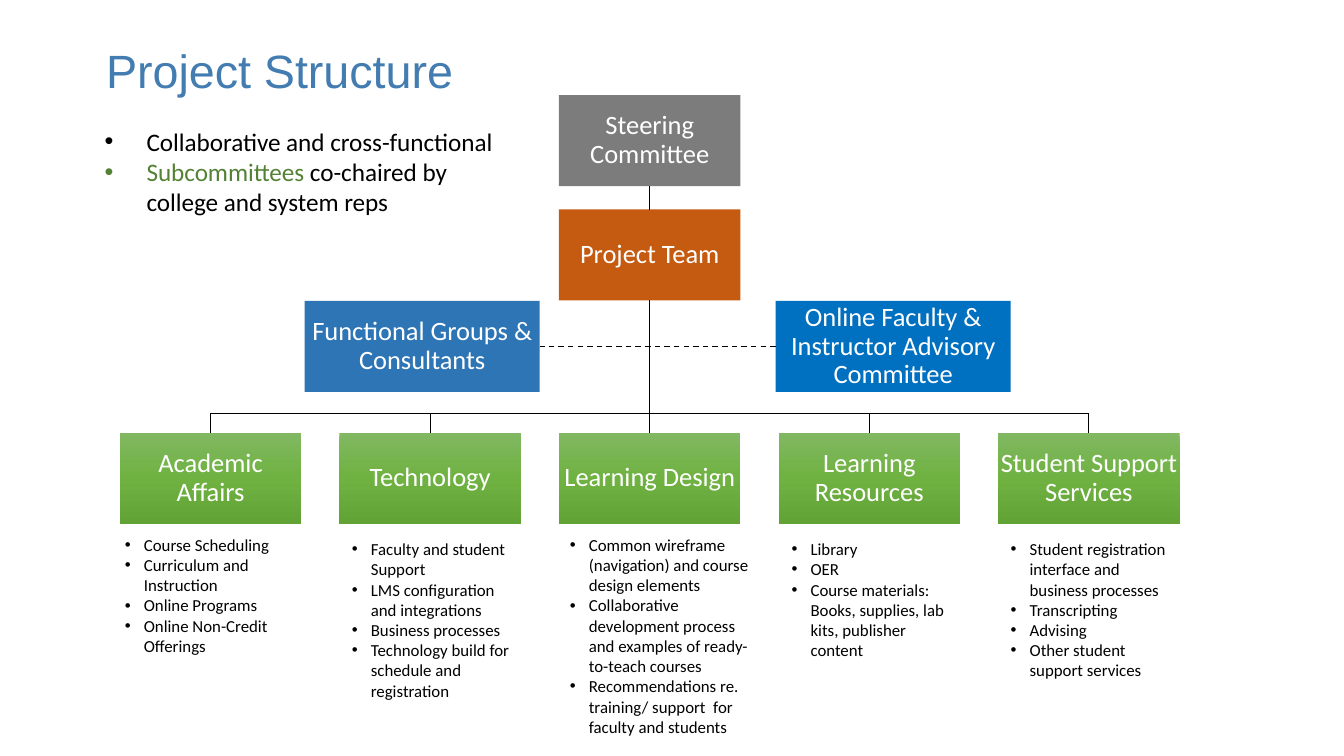
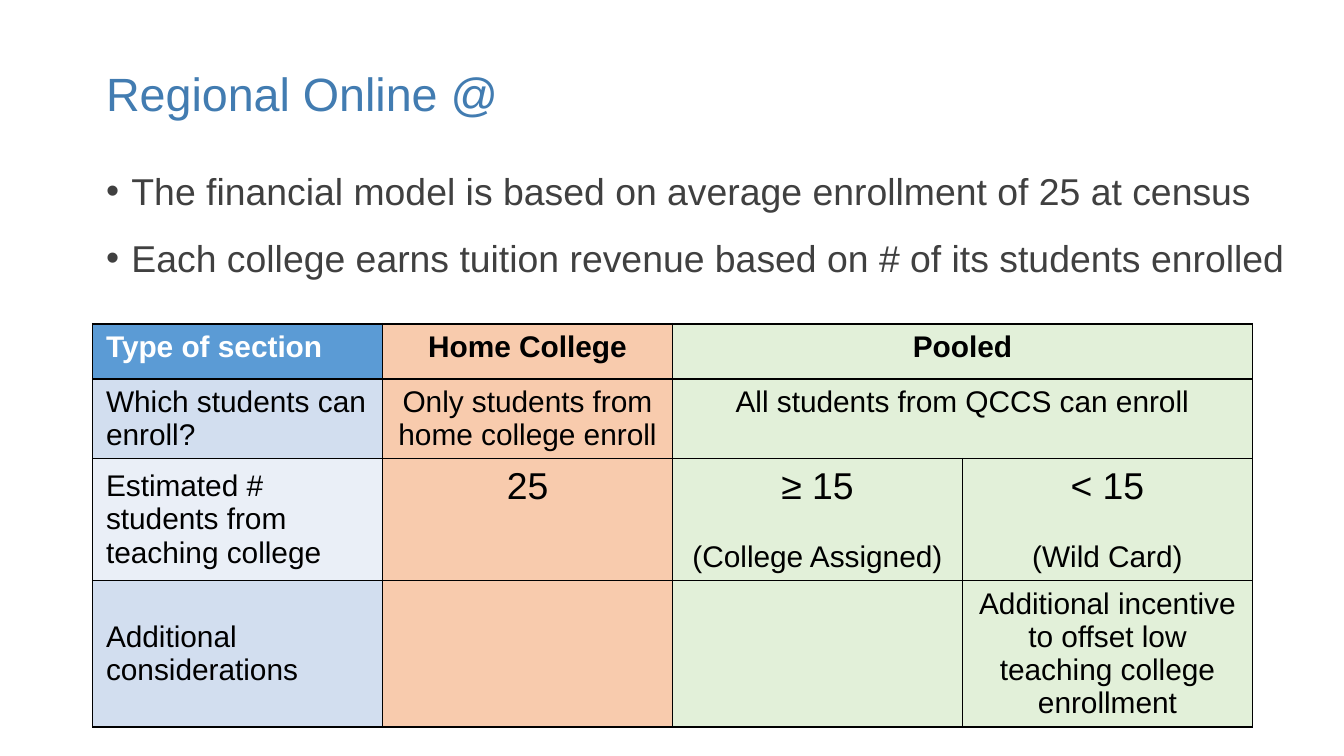
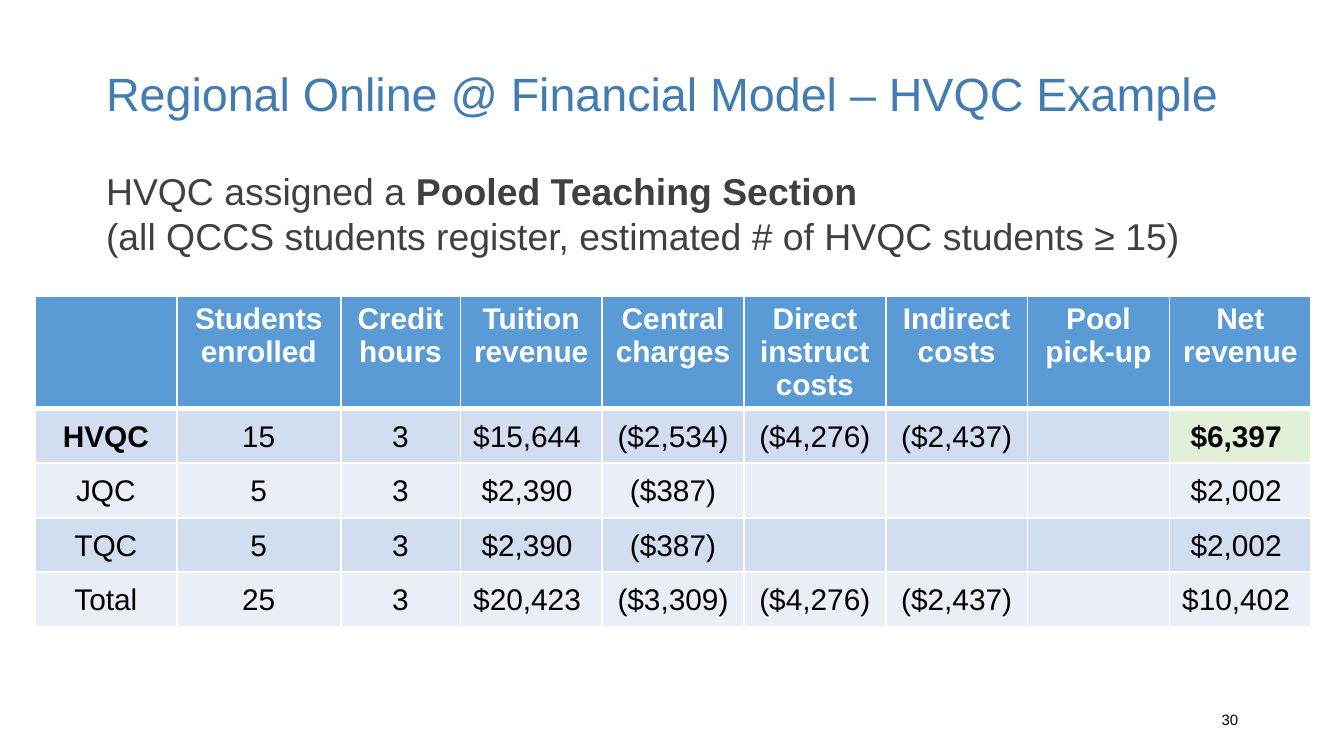
"""Build three slides on an online course project: structure, model and example."""
from copy import deepcopy

from lxml.etree import SubElement
from pptx import Presentation
from pptx.dml.color import RGBColor
from pptx.enum.dml import MSO_LINE
from pptx.enum.shapes import MSO_CONNECTOR, MSO_SHAPE
from pptx.enum.text import MSO_ANCHOR, MSO_AUTO_SIZE, PP_ALIGN
from pptx.oxml.ns import qn
from pptx.util import Cm, Pt

BLACK = RGBColor(0x00, 0x00, 0x00)
WHITE = RGBColor(0xFF, 0xFF, 0xFF)
TITLE = RGBColor(0x42, 0x7C, 0xB1)
BODY = RGBColor(0x40, 0x40, 0x40)
GRAY = RGBColor(0x7C, 0x7C, 0x7C)
RUST = RGBColor(0xC5, 0x5A, 0x11)
AZURE = RGBColor(0x00, 0x70, 0xC0)
STEEL = RGBColor(0x2E, 0x75, 0xB6)
LEAF = RGBColor(0x54, 0x82, 0x35)
HEAD = RGBColor(0x5B, 0x9B, 0xD5)
BANDS = (RGBColor(0xD2, 0xDE, 0xEF), RGBColor(0xEA, 0xEF, 0xF7))
PEACH = RGBColor(0xF8, 0xCB, 0xAD)
MINT = RGBColor(0xE2, 0xF0, 0xD9)
GREENS = (
    RGBColor(0x81, 0xB8, 0x61),
    RGBColor(0x6F, 0xB2, 0x42),
    RGBColor(0x62, 0xA3, 0x36),
)

SANS = "Arial"
HUMAN = "Calibri"

HUB = 12.28
STEP = 4.15
BOX_W, BOX_H = 3.43, 1.72
SIDE_W = 4.44
BUS_Y, TEAM_Y = 7.81, 8.18

TEAMS = (
    ("Academic Affairs", (2.11, 9.98, 3.58, 3.0), (
        "Course Scheduling",
        "Curriculum and Instruction",
        "Online Programs",
        "Online Non-Credit Offerings")),
    ("Technology", (6.4, 10.06, 3.58, 3.76), (
        "Faculty and student Support",
        "LMS configuration and integrations",
        "Business processes",
        "Technology build for schedule and registration")),
    ("Learning Design", (10.52, 9.98, 4.04, 4.11), (
        "Common wireframe (navigation) and course design elements",
        "Collaborative development process and examples of ready-to-teach courses",
        "Recommendations re.  training/ support  for faculty and students")),
    ("Learning Resources", (14.71, 10.06, 3.58, 2.57), (
        "Library",
        "OER",
        "Course materials: Books, supplies, lab kits, publisher content")),
    ("Student Support Services", (18.85, 10.06, 3.58, 2.95), (
        "Student registration interface and business processes",
        "Transcripting",
        "Advising",
        "Other student support services")),
)

MODEL = (
    ("Type of section", "Home College", "Pooled", ""),
    ("Which students can enroll?", "Only students from home college enroll",
     "All students from QCCS can enroll", ""),
    ("Estimated # students from teaching college", "25",
     "≥ 15\n(College Assigned)", "< 15\n(Wild Card)"),
    ("Additional considerations", "", "",
     "Additional incentive to offset low teaching college enrollment"),
)

COSTS = (
    ("", "Students enrolled", "Credit hours", "Tuition revenue", "Central charges",
     "Direct instruct costs", "Indirect costs", "Pool pick-up", "Net revenue"),
    ("HVQC", "15", "3", "$15,644 ", "($2,534)", "($4,276)", "($2,437)", "", "$6,397 "),
    ("JQC", "5", "3", "$2,390 ", "($387)", "", "", "", "$2,002 "),
    ("TQC", "5", "3", "$2,390 ", "($387)", "", "", "", "$2,002 "),
    ("Total", "25", "3", "$20,423 ", "($3,309)", "($4,276)", "($2,437)", "", "$10,402 "),
)


def place(shape, left, top, width, height):
    """Move and size a shape, in centimetres."""
    shape.left, shape.top = Cm(left), Cm(top)
    shape.width, shape.height = Cm(width), Cm(height)


def style(para, face, size, ink, bold=False):
    """Set the font of a whole paragraph."""
    font = para.font
    font.name, font.size, font.bold = face, Pt(size), bold
    font.color.rgb = ink


def lines(frame, texts):
    """Yield one paragraph of the frame for each text."""
    for i, text in enumerate(texts):
        para = frame.add_paragraph() if i else frame.paragraphs[0]
        para.text = text
        yield para


def bullet(para, hang):
    """Give a paragraph a hanging bullet, or none when hang is zero."""
    props = para._p.get_or_add_pPr()
    props.set("marL", str(Cm(hang)))
    props.set("indent", str(-Cm(hang)))
    if hang:
        SubElement(props, qn("a:buFont")).set("typeface", SANS)
        SubElement(props, qn("a:buChar")).set("char", "•")
    else:
        SubElement(props, qn("a:buNone"))


def start(deck, layout, title, top=0.76, height=2.13):
    """Add a slide with its title."""
    slide = deck.slides.add_slide(deck.slide_layouts[layout])
    head = slide.shapes.title
    place(head, 1.75, top, 21.9, height)
    head.text_frame.text = title
    head.text_frame.auto_size = MSO_AUTO_SIZE.NONE
    head.text_frame.vertical_anchor = MSO_ANCHOR.MIDDLE
    para = head.text_frame.paragraphs[0]
    para.alignment, para.line_spacing = PP_ALIGN.LEFT, 0.9
    style(para, SANS, 25, TITLE)
    return slide


def body(slide, texts, hang=0):
    """Fill the body placeholder and return its last paragraph."""
    holder = slide.placeholders[1]
    place(holder, 1.75, 3.05, 23.04, 9.8)
    holder.text_frame.auto_size = MSO_AUTO_SIZE.NONE
    for para in lines(holder.text_frame, texts):
        bullet(para, hang)
        para.space_before = para.space_after = Pt(6)
        style(para, SANS, 20, BODY)
    return para


def notes(slide, area, texts, size, hang):
    """Add a bulleted text box and return its last paragraph."""
    frame = slide.shapes.add_textbox(*map(Cm, area)).text_frame
    frame.word_wrap = True
    frame.auto_size = MSO_AUTO_SIZE.SHAPE_TO_FIT_TEXT
    for para in lines(frame, texts):
        bullet(para, hang)
        style(para, HUMAN, size, BLACK)
    return para


def block(slide, text, left, top, width=BOX_W, fill=None):
    """Add a chart box, green graded unless a fill is given."""
    box = slide.shapes.add_shape(
        MSO_SHAPE.RECTANGLE, Cm(left), Cm(top), Cm(width), Cm(BOX_H))
    box.shadow.inherit = False
    box.line.fill.background()
    if fill is not None:
        box.fill.solid()
        box.fill.fore_color.rgb = fill
    else:
        box.fill.gradient()
        box.fill.gradient_angle = 270
        first = next(box._element.spPr.iter(qn("a:gs")))
        first.addnext(deepcopy(first))
        for i, stop in enumerate(box.fill.gradient_stops):
            stop.color.rgb, stop.position = GREENS[i], i / 2
    frame = box.text_frame
    frame.word_wrap = True
    frame.vertical_anchor = MSO_ANCHOR.MIDDLE
    frame.margin_left = frame.margin_right = Cm(0.04)
    frame.margin_top = frame.margin_bottom = Cm(0.03)
    frame.text = text
    para = frame.paragraphs[0]
    para.alignment, para.line_spacing = PP_ALIGN.CENTER, 0.9
    style(para, HUMAN, 14.2, WHITE)
    return box


def link(slide, begin=(0, 0), end=(0, 0), tail=None, tip=None, width=0.5):
    """Draw a line between points; tail and tip join it to (box, side)."""
    line = slide.shapes.add_connector(
        MSO_CONNECTOR.STRAIGHT, *map(Cm, (*begin, *end)))
    line.line.color.rgb = BLACK
    line.line.width = Pt(width)
    SubElement(line._element.spPr, qn("a:effectLst"))
    if tail:
        line.begin_connect(*tail)
    if tip:
        line.end_connect(*tip)
    return line


def grid(slide, left, top, widths, heights):
    """Add a plain table with given columns and rows."""
    table = slide.shapes.add_table(
        len(heights), len(widths), Cm(left), Cm(top),
        Cm(sum(widths)), Cm(sum(heights))).table
    table.first_row = table.horz_banding = False
    for col, width in zip(table.columns, widths):
        col.width = Cm(width)
    for row, height in zip(table.rows, heights):
        row.height = Cm(height)
    return table


def edge(cell, ink, top=1, base=1):
    """Draw the four borders of a cell."""
    props = cell._tc.get_or_add_tcPr()
    for side, width in zip("LRTB", (1, 1, top, base)):
        line = SubElement(props, qn("a:ln" + side), w=str(Pt(width)))
        fill = SubElement(line, qn("a:solidFill"))
        SubElement(fill, qn("a:srgbClr"), val=str(ink))


def put(cell, text, fill, ink=BLACK, bold=False, mid=False, left=False):
    """Fill a cell with colour and text."""
    cell.fill.solid()
    cell.fill.fore_color.rgb = fill
    cell.vertical_anchor = MSO_ANCHOR.MIDDLE if mid else MSO_ANCHOR.TOP
    for para in lines(cell.text_frame, text.split("\n")):
        para.alignment = PP_ALIGN.LEFT if left else PP_ALIGN.CENTER
        style(para, SANS, 16, ink, bold)


def chart(deck):
    """Build the project structure slide."""
    slide = start(deck, 5, "Project Structure", 0, 2.77)
    mid = HUB - BOX_W / 2
    steer = block(slide, "Steering Committee", mid, 1.8, fill=GRAY)
    crew = block(slide, "Project Team", mid, 3.96, fill=RUST)
    panel = block(slide, "Online Faculty & Instructor Advisory Committee",
                  14.66, 5.69, SIDE_W, AZURE)
    group = block(slide, "Functional Groups & Consultants",
                  5.76, 5.69, SIDE_W, STEEL)
    link(slide, tail=(steer, 2), tip=(crew, 0))
    dash = link(slide, tail=(panel, 1), tip=(group, 3), width=0.75)
    dash.line.dash_style = MSO_LINE.DASH
    link(slide, (HUB - 2 * STEP, BUS_Y), (HUB + 2 * STEP, BUS_Y))
    for i, (name, area, tasks) in enumerate(TEAMS):
        axis = HUB + (i - 2) * STEP
        box = block(slide, name, axis - BOX_W / 2, TEAM_Y)
        stem = (crew, 2) if i == 2 else None
        link(slide, (axis, BUS_Y), tail=stem, tip=(box, 0))
        notes(slide, area, tasks, 9, 0.36)
    last = notes(slide, (1.73, 2.26, 8.1, 2.57),
                 ("Collaborative and cross-functional", "Subcommittees"), 13.5, 0.79)
    last.runs[0].font.color.rgb = LEAF
    last.add_run().text = " co-chaired by college and system reps"


def model(deck):
    """Build the section type slide."""
    slide = start(deck, 1, "Regional Online @")
    body(slide, (
        "The financial model is based on average enrollment of 25 at census",
        "Each college earns tuition revenue based on # of its students enrolled"), 0.48)
    table = grid(slide, 1.75, 6.12, [5.48] * 4, (1.04, 1.51, 2.28, 2.76))
    for i, row in enumerate(MODEL):
        fills = (BANDS[(i + 1) % 2] if i else HEAD, PEACH, MINT, MINT)
        for j, text in enumerate(row):
            cell = table.cell(i, j)
            edge(cell, BLACK)
            put(cell, text, fills[j], BLACK if i or j else WHITE,
                bold=i == 0, mid=i > 0 and j == 0, left=j == 0)
            if i == 2 and j:
                cell.text_frame.paragraphs[0].font.size = Pt(20)
                for para in cell.text_frame.paragraphs[1:]:
                    para.space_before = Pt(18)
    for i in range(2):
        table.cell(i, 2).merge(table.cell(i, 3))


def sample(deck):
    """Build the worked example slide."""
    slide = start(deck, 1, "Regional Online @ Financial Model – HVQC Example")
    para = body(slide, ("HVQC assigned a ",))
    strong = para.add_run()
    strong.text = "Pooled Teaching Section"
    strong.font.bold = True
    para.add_line_break()
    para.add_run().text = "(all QCCS students register, estimated # of HVQC students ≥ 15)"

    table = grid(slide, 0.66, 5.59, [2.68, 3.1, 2.26] + [2.68] * 6, [2.13] + [1.03] * 4)
    for i, row in enumerate(COSTS):
        for j, text in enumerate(row):
            cell = table.cell(i, j)
            edge(cell, WHITE, 3 if i == 1 else 1, 1 if i else 3)
            if i == 0:
                put(cell, text, HEAD, WHITE, bold=True)
                continue
            net = i == 1 and j == 8
            put(cell, text, MINT if net else BANDS[(i + 1) % 2],
                bold=net or (i == 1 and j == 0), mid=True)
            cell.margin_left = cell.margin_right = cell.margin_top = Cm(0.03)
            cell.margin_bottom = 0

    frame = slide.shapes.add_textbox(Cm(17.93), Cm(13.23), Cm(5.72), Cm(0.76)).text_frame
    frame.word_wrap = True
    frame.vertical_anchor = MSO_ANCHOR.MIDDLE
    frame.text = "30"
    frame.paragraphs[0].alignment = PP_ALIGN.RIGHT
    style(frame.paragraphs[0], SANS, 8, BLACK)


def main():
    """Build and save the slides."""
    deck = Presentation()
    deck.slide_width, deck.slide_height = Cm(25.4), Cm(14.29)
    chart(deck)
    model(deck)
    sample(deck)
    deck.save("out.pptx")


if __name__ == "__main__":
    main()
